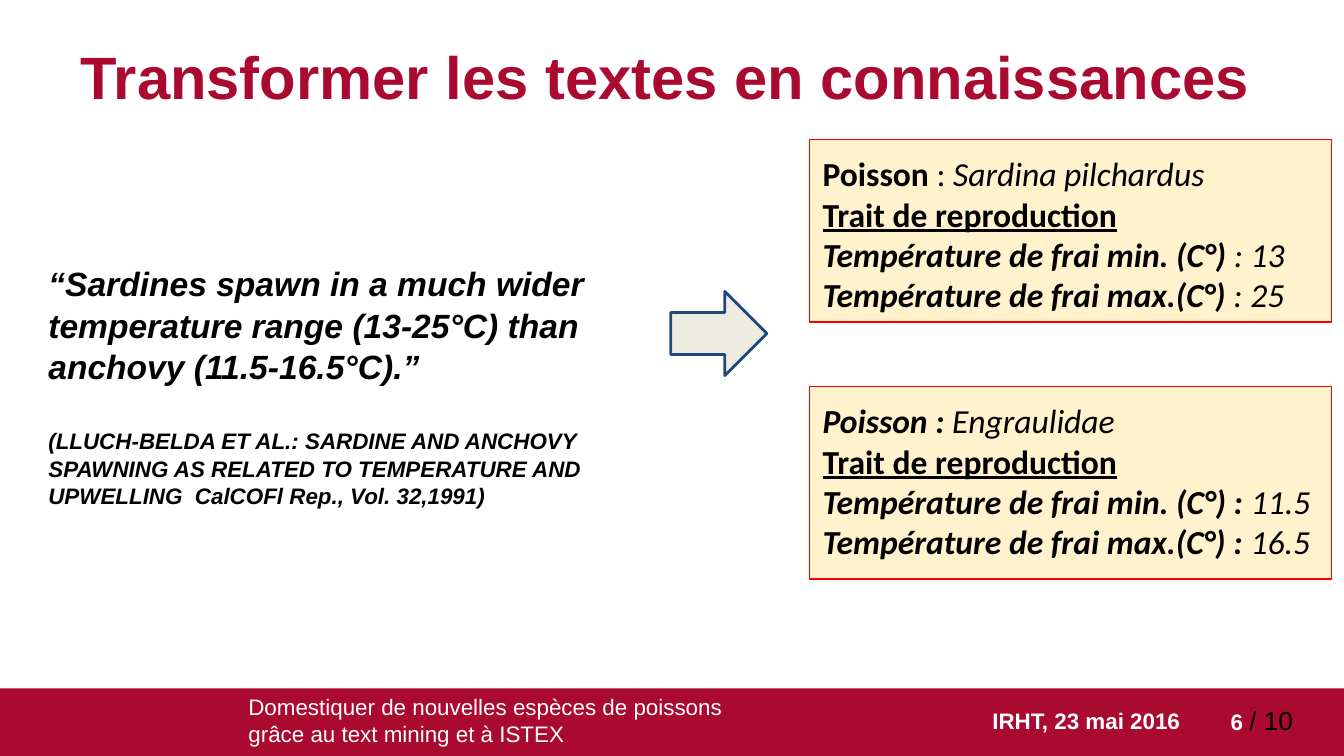
"""Build the slide on turning texts into knowledge about fish."""
from lxml.etree import SubElement
from pptx import Presentation
from pptx.dml.color import RGBColor
from pptx.enum.shapes import MSO_SHAPE as Shape
from pptx.enum.text import MSO_ANCHOR as Anchor, MSO_AUTO_SIZE as AutoSize, PP_ALIGN as Align
from pptx.oxml.ns import qn
from pptx.util import Pt

CRIMSON, WHITE, BLACK = "AA0A2F", "FFFFFF", "000000"


def color(hex_string):
    """Turn a hex string into a colour."""
    return RGBColor.from_string(hex_string)


def add_runs(paragraph, runs, font_name):
    """Add (text, size, colour, style letters) runs to a paragraph."""
    for text, size, hex_string, style in runs:
        run = paragraph.add_run()
        run.text = text
        font = run.font
        font.name, font.size = font_name, Pt(size)
        font.color.rgb = color(hex_string)
        font.bold, font.italic, font.underline = (letter in style for letter in "biu")


presentation = Presentation()
presentation.slide_width, presentation.slide_height = Pt(720), Pt(405)
slide = presentation.slides.add_slide(presentation.slide_layouts[1])
shapes = slide.shapes

band = shapes.add_shape(Shape.RECTANGLE, Pt(0), Pt(368.8), Pt(720), Pt(36.2))
band.shadow.inherit = False
band.fill.solid()
band.fill.fore_color.rgb = color(CRIMSON)
band.line.fill.background()

title = shapes.title
title.left, title.top, title.width, title.height = Pt(36), Pt(16.5), Pt(673), Pt(48.5)
title.text_frame.auto_size = AutoSize.NONE
title.text_frame.vertical_anchor = Anchor.MIDDLE
heading = title.text_frame.paragraphs[0]
heading.alignment = Align.LEFT
add_runs(heading, [("Transformer les textes en connaissances", 32, CRIMSON, "b")], "Arial")

body = slide.placeholders[1]
body.left, body.top, body.width, body.height = Pt(18.7), Pt(133.2), Pt(325.4), Pt(154)
frame = body.text_frame
frame.auto_size = AutoSize.NONE
frame.vertical_anchor = Anchor.TOP
frame.margin_left = frame.margin_right = frame.margin_top = frame.margin_bottom = Pt(7.2)
quotation = [
    ("“Sardines spawn in a much wider temperature range (13-25°C) than anchovy (11.5-16.5°C).”", 18, 0),
    ("(LLUCH-BELDA ET AL.: SARDINE AND ANCHOVY SPAWNING AS RELATED TO TEMPERATURE AND "
     "UPWELLING  CalCOFl Rep., Vol. 32,1991)", 12, 21.3),
]
for index, (text, size, space_before) in enumerate(quotation):
    paragraph = frame.add_paragraph() if index else frame.paragraphs[0]
    paragraph.space_before = Pt(space_before)
    paragraph.line_spacing = 1.03
    properties = paragraph._p.get_or_add_pPr()
    properties.set("marL", "0")
    properties.set("indent", "0")
    SubElement(properties, qn("a:buNone"))
    add_runs(paragraph, [(text, size, BLACK, "bi")], "Arial")

arrow = shapes.add_shape(Shape.RIGHT_ARROW, Pt(359.3), Pt(156.2), Pt(51.5), Pt(45))
arrow.shadow.inherit = False
arrow.fill.solid()
arrow.fill.fore_color.rgb = color("EEECE1")
arrow.line.color.rgb = color("1F497D")
arrow.line.width = Pt(1.5)

minimum, maximum = "Température de frai min. (C°)", "Température de frai max.(C°)"
trait = [("Trait de reproduction", "bu")]
cards = [
    (74.9, 97.7, [
        [("Poisson ", "b"), (": ", ""), ("Sardina pilchardus", "i")], trait,
        [(minimum, "bi"), (" : 13", "i")], [(maximum, "bi"), (" : 25", "i")]]),
    (207.2, 103.1, [
        [("Poisson : ", "bi"), ("Engraulidae", "i")], trait,
        [(minimum + " : ", "bi"), ("11.5", "i")], [(maximum + " : ", "bi"), ("16.5", "i")]]),
]
for top, height, lines in cards:
    card = shapes.add_shape(Shape.RECTANGLE, Pt(433.6), Pt(top), Pt(279.6), Pt(height))
    card.shadow.inherit = False
    card.fill.solid()
    card.fill.fore_color.rgb = color("FFF2CC")
    card.line.color.rgb = color("FF0000")
    card.line.width = Pt(0.75)
    frame = card.text_frame
    frame.word_wrap = True
    frame.vertical_anchor = Anchor.TOP
    frame.margin_left = frame.margin_right = frame.margin_top = frame.margin_bottom = Pt(7.2)
    for index, line in enumerate(lines):
        paragraph = frame.add_paragraph() if index else frame.paragraphs[0]
        paragraph.alignment = Align.LEFT
        add_runs(paragraph, [(text, 18, BLACK, style) for text, style in line], "Calibri")

footers = [
    (126, 276.5, Align.LEFT,
     [("Domestiquer de nouvelles espèces de poissons grâce au text mining et à ISTEX", 12, WHITE, "")]),
    (517.7, 121.7, Align.RIGHT, [("IRHT, 23 mai 2016", 12, WHITE, "b")]),
    (637.2, 62.6, Align.RIGHT, [("6 ", 12, WHITE, "b"), ("/ 10", 14, BLACK, "")]),
]
for left, width, alignment, runs in footers:
    footer = shapes.add_textbox(Pt(left), Pt(375.1), Pt(width), Pt(21.6))
    footer.text_frame.word_wrap = True
    footer.text_frame.vertical_anchor = Anchor.MIDDLE
    paragraph = footer.text_frame.paragraphs[0]
    paragraph.alignment = alignment
    add_runs(paragraph, runs, "Arial")

presentation.save("out.pptx")
